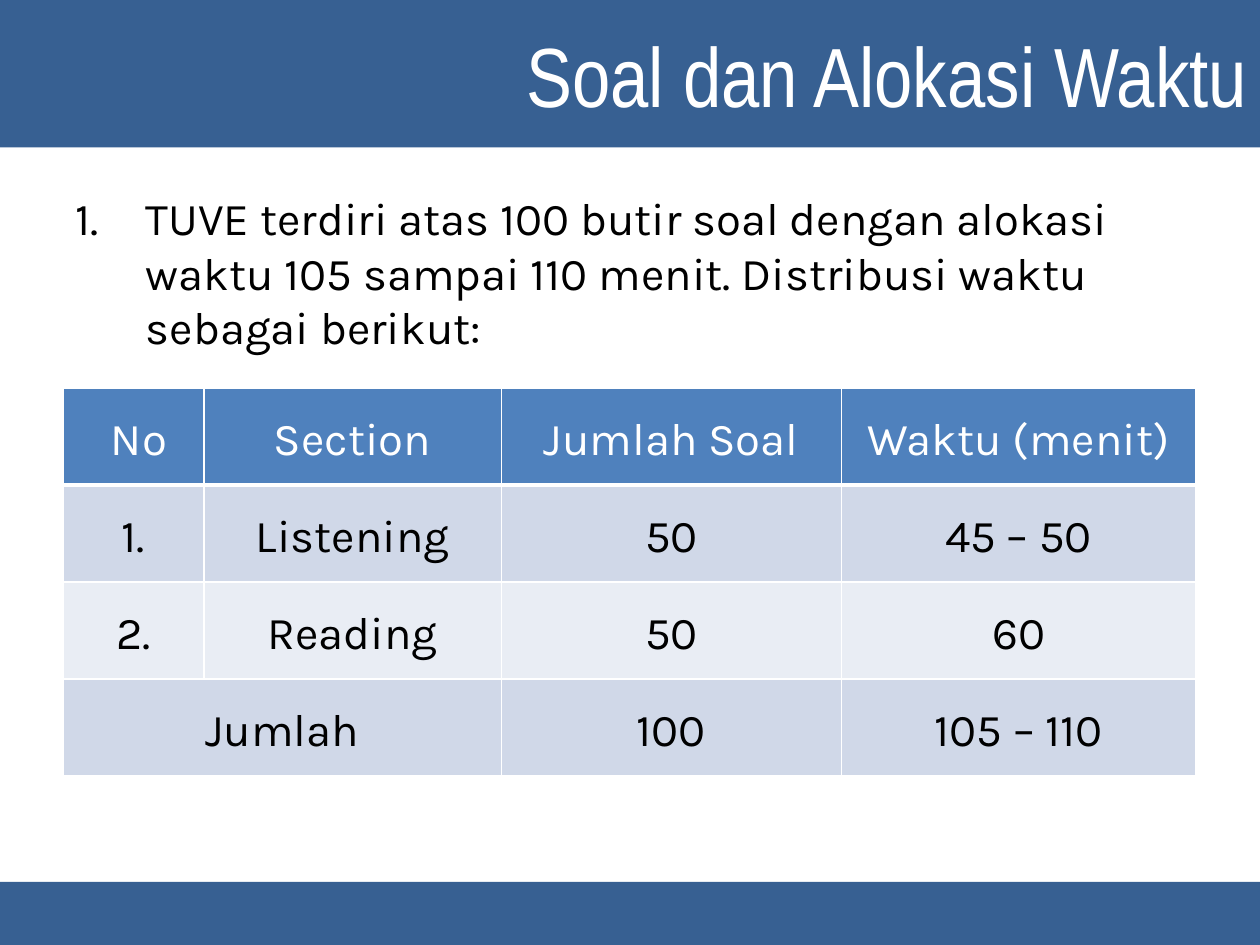
from lxml import etree
from pptx import Presentation
from pptx.dml.color import RGBColor
from pptx.enum.shapes import MSO_SHAPE
from pptx.enum.text import MSO_ANCHOR, PP_ALIGN
from pptx.oxml.ns import qn
from pptx.util import Inches, Pt

RECTANGLE = MSO_SHAPE.RECTANGLE
MIDDLE = MSO_ANCHOR.MIDDLE
LEFT, CENTER, RIGHT = PP_ALIGN.LEFT, PP_ALIGN.CENTER, PP_ALIGN.RIGHT

COLORS = {
    "band": "376092",
    "header": "4F81BD",
    "odd_row": "D0D8E8",
    "even_row": "E9EDF4",
    "white": "FFFFFF",
    "black": "000000",
}
BODY_FONT, BODY_SIZE = "Karla", 26
COLUMN_WIDTHS = [1.12, 2.36, 2.7, 2.81]
ROW_HEIGHT = 0.77
SCHEDULE = [
    [" No", "Section", "Jumlah Soal", "Waktu (menit)"],
    ["1.", "Listening", "50", "45 – 50"],
    ["2.", "Reading", "50", "60"],
    ["Jumlah", "", "100", "105 – 110"],
]


def rgb(name):
    return RGBColor.from_string(COLORS[name])


def write(frame, text, color, align, font=BODY_FONT, size=BODY_SIZE):
    paragraph = frame.paragraphs[0]
    paragraph.alignment = align
    run = paragraph.add_run()
    run.text = text
    for name, value in {"name": font, "size": Pt(size), "bold": False}.items():
        setattr(run.font, name, value)
    run.font.color.rgb = rgb(color)
    return paragraph


def add_band(slide, top, height):
    band = slide.shapes.add_shape(
        RECTANGLE, 0, Inches(top), Inches(10), Inches(height))
    band.shadow.inherit = False
    band.fill.solid()
    band.fill.fore_color.rgb = rgb("band")
    band.line.fill.background()
    return band


def add_numbered_text(slide, text):
    box = slide.shapes.add_textbox(
        Inches(0.5), Inches(1.46), Inches(9.33), Inches(0.98))
    box.text_frame.word_wrap = True
    paragraph = write(box.text_frame, text, "black", LEFT)
    paragraph.space_after = Pt(12)
    # Hanging indent with automatic numbering
    properties = paragraph._p.get_or_add_pPr()
    properties.set("marL", str(Inches(0.56)))
    properties.set("indent", str(-Inches(0.56)))
    numbering = etree.SubElement(properties, qn("a:buAutoNum"))
    numbering.set("type", "arabicPeriod")


def set_borders(cell, widths):
    """Draw white borders; widths are in points by side: L, R, T, B."""
    properties = cell._tc.get_or_add_tcPr()
    for position, (side, width) in enumerate(widths.items()):
        line = etree.Element(qn(f"a:ln{side}"), w=str(Pt(width)))
        fill = etree.SubElement(line, qn("a:solidFill"))
        etree.SubElement(fill, qn("a:srgbClr"), val=COLORS["white"])
        properties.insert(position, line)


def format_cell(cell, fill, borders):
    layout = {
        "vertical_anchor": MIDDLE,
        "margin_left": Inches(0.07),
        "margin_right": Inches(0.07),
        "margin_top": 0,
        "margin_bottom": 0,
    }
    for name, value in layout.items():
        setattr(cell, name, value)
    cell.fill.solid()
    cell.fill.fore_color.rgb = rgb(fill)
    set_borders(cell, borders)


def add_schedule(slide):
    rows, columns = len(SCHEDULE), len(COLUMN_WIDTHS)
    table = slide.shapes.add_table(
        rows, columns, Inches(0.5), Inches(3.08),
        Inches(sum(COLUMN_WIDTHS)), Inches(rows * ROW_HEIGHT)).table
    for column, width in zip(table.columns, COLUMN_WIDTHS):
        column.width = Inches(width)

    for r, entries in enumerate(SCHEDULE):
        table.rows[r].height = Inches(ROW_HEIGHT)
        fill = "header" if r == 0 else "odd_row" if r % 2 else "even_row"
        # The rule under the header is thicker than the grid
        borders = {"L": 1, "R": 1, "T": 3 if r == 1 else 1,
                   "B": 3 if r == 0 else 1}
        for c, entry in enumerate(entries):
            cell = table.cell(r, c)
            format_cell(cell, fill, borders)
            if entry:
                color = "white" if r == 0 else "black"
                paragraph = write(cell.text_frame, entry, color, CENTER)
                paragraph.line_spacing = 1.15

    # The total label spans the first two columns
    table.cell(rows - 1, 0).merge(table.cell(rows - 1, 1))


def main():
    deck = Presentation()
    deck.slide_width, deck.slide_height = Inches(10), Inches(7.5)
    slide = deck.slides.add_slide(deck.slide_layouts[6])

    # Footer and title bands
    add_band(slide, 7, 0.5)
    title = add_band(slide, 0, 1.17).text_frame
    title.word_wrap = True
    title.vertical_anchor = MIDDLE
    write(title, "Soal dan Alokasi Waktu", "white", RIGHT, "Arial Narrow", 48)

    # Introduction and time allocation
    add_numbered_text(
        slide,
        "TUVE terdiri atas 100 butir soal dengan alokasi waktu 105 sampai "
        "110 menit. Distribusi waktu sebagai berikut:")
    add_schedule(slide)

    deck.save("out.pptx")


if __name__ == "__main__":
    main()
